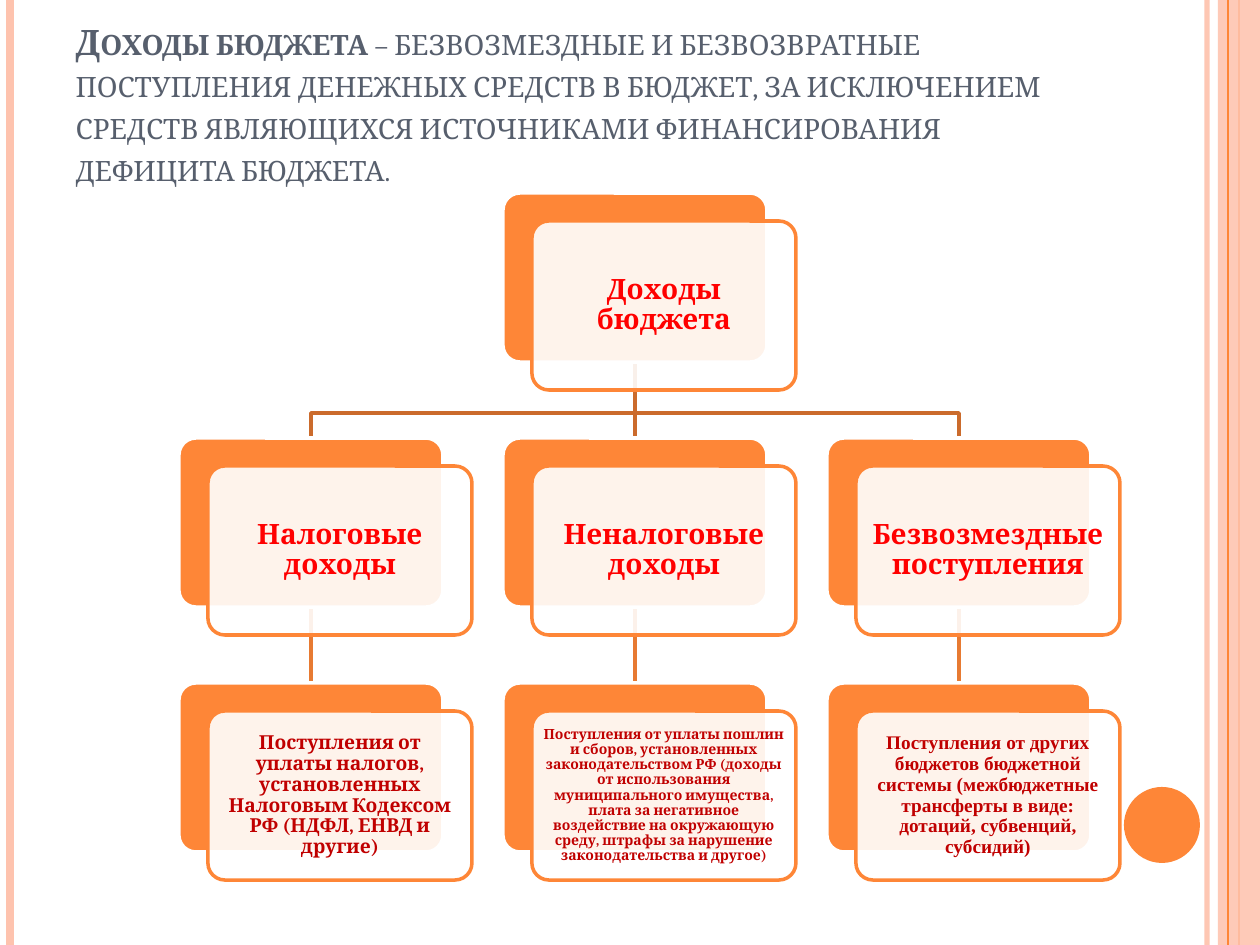
from lxml import etree
from pptx import Presentation
from pptx.dml.color import RGBColor
from pptx.enum.shapes import MSO_CONNECTOR, MSO_SHAPE
from pptx.enum.text import MSO_ANCHOR, MSO_AUTO_SIZE, PP_ALIGN
from pptx.oxml.ns import qn
from pptx.util import Emu, Pt

STRAIGHT = MSO_CONNECTOR.STRAIGHT
RECTANGLE, ROUNDED, OVAL = MSO_SHAPE.RECTANGLE, MSO_SHAPE.ROUNDED_RECTANGLE, MSO_SHAPE.OVAL
MIDDLE, BOTTOM = MSO_ANCHOR.MIDDLE, MSO_ANCHOR.BOTTOM
LEFT, CENTER = PP_ALIGN.LEFT, PP_ALIGN.CENTER
NO_AUTOFIT = MSO_AUTO_SIZE.NONE

EMU_PER_PX = 914400 / 126
SLIDE_WIDTH, SLIDE_HEIGHT = 1260, 945
ORANGE, PEACH, WHITE = "FE8637", "FEC3AE", "FFFFFF"
RED, DARK_RED, SLATE = "FF0000", "C00000", "575F6D"
UPPER_LINE, LOWER_LINE = "CB6B2C", "E77A32"

# Chart grid: back boxes on a regular pitch, front boxes shifted
GRID_LEFT, GRID_TOP, COLUMN_PITCH, ROW_PITCH = 179, 193, 324, 245
BOX_WIDTH, BOX_HEIGHT, SHIFT_X, SHIFT_Y = 264, 169, 29, 28
BRANCH_Y = 413

# (column, row): text, size, colour, inset, font
BOXES = {
    (1, 0): ("Доходы бюджета", 16, RED, 9, "Cambria"),
    (0, 1): ("Налоговые доходы", 16, RED, 9, "Cambria"),
    (1, 1): ("Неналоговые доходы", 16, RED, 9, "Cambria"),
    (2, 1): ("Безвозмездные поступления", 16, RED, 9, "Cambria"),
    (0, 2): ("Поступления от уплаты налогов, установленных Налоговым Кодексом РФ "
             "(НДФЛ, ЕНВД и другие)", 11, DARK_RED, 6, "Cambria"),
    (1, 2): ("Поступления от уплаты пошлин и сборов, установленных законодательством РФ "
             "(доходы от использования муниципального имущества, плата за негативное "
             "воздействие на окружающую среду, штрафы за нарушение законодательства "
             "и другое)", 8, DARK_RED, 4, "Cambria"),
    (2, 2): ("Поступления от других бюджетов бюджетной системы (межбюджетные трансферты "
             "в виде: дотаций, субвенций, субсидий)", 11, DARK_RED, 6, "Times New Roman"),
}
TITLE_RUNS = [
    ("Доходы бюджета ", True),
    ("– безвозмездные и безвозвратные поступления денежных средств в бюджет, "
     "за исключением средств являющихся источниками финансирования дефицита бюджета.", False),
]


def px(value):
    return Emu(round(value * EMU_PER_PX))


def rgb(color):
    return RGBColor.from_string(color)


def set_alpha(fill_format, percent):
    color = fill_format._xPr.find(qn("a:solidFill"))[0]
    etree.SubElement(color, qn("a:alpha"), val=str(percent * 1000))


def style_line(line, color, width):
    line.color.rgb = rgb(color)
    line.width = Pt(width)


def add_shape(slide, kind, left, top, width, height, fill, alpha=100, line=None):
    shape = slide.shapes.add_shape(kind, px(left), px(top), px(width), px(height))
    shape.shadow.inherit = False
    shape.fill.solid()
    shape.fill.fore_color.rgb = rgb(fill)
    if alpha < 100:
        set_alpha(shape.fill, alpha)
    if line:
        style_line(shape.line, line, 2)
    else:
        shape.line.fill.background()
    return shape


def add_line(slide, x1, y1, x2, y2, color, width):
    connector = slide.shapes.add_connector(STRAIGHT, px(x1), px(y1), px(x2), px(y2))
    style_line(connector.line, color, width)
    etree.SubElement(connector._element.spPr, qn("a:effectLst"))
    return connector


def send_to_back(slide, shape):
    slide.shapes._spTree.insert(2, shape._element)


def add_decoration(slide):
    for x, color, width in [(1207, PEACH, 3), (10, PEACH, 4.5), (1239, ORANGE, 1.5)]:
        line = add_line(slide, x, 0, x, SLIDE_HEIGHT, color, width)
        if width == 3:
            set_alpha(line.line.fill, 93)
    add_shape(slide, RECTANGLE, 1218, 0, 42, SLIDE_HEIGHT, PEACH, alpha=87)
    add_line(slide, 1228, 0, 1228, SLIDE_HEIGHT, ORANGE, 0.75)
    add_shape(slide, OVAL, 1124, 787, 76, 76, ORANGE)


def fill_title(slide):
    title = slide.shapes.title
    title.left, title.top, title.width, title.height = px(63), px(38), px(1029), px(157)
    frame = title.text_frame
    frame.vertical_anchor = BOTTOM
    frame.auto_size = NO_AUTOFIT
    frame.word_wrap = True
    paragraph = frame.paragraphs[0]
    paragraph.alignment = LEFT
    for text, bold in TITLE_RUNS:
        run = paragraph.add_run()
        run.text = text
        run.font.name = "Cambria"
        run.font.size = Pt(20)
        run.font.bold = bold
        run.font.color.rgb = rgb(SLATE)
        run._r.get_or_add_rPr().set("cap", "small")


def box_origin(column, row):
    return GRID_LEFT + column * COLUMN_PITCH, GRID_TOP + row * ROW_PITCH


def add_back_box(slide, column, row):
    left, top = box_origin(column, row)
    box = add_shape(slide, ROUNDED, left, top, BOX_WIDTH, BOX_HEIGHT, ORANGE, line=WHITE)
    box.adjustments[0] = 0.1
    return box


def add_front_box(slide, column, row, text, size, color, inset, font):
    left, top = box_origin(column, row)
    box = add_shape(slide, ROUNDED, left + SHIFT_X, top + SHIFT_Y, BOX_WIDTH, BOX_HEIGHT,
                    WHITE, alpha=90, line=ORANGE)
    box.adjustments[0] = 0.1
    frame = box.text_frame
    frame.word_wrap = True
    frame.vertical_anchor = MIDDLE
    frame.margin_left = frame.margin_right = px(inset)
    frame.margin_top = frame.margin_bottom = px(inset)
    paragraph = frame.paragraphs[0]
    paragraph.text = text
    paragraph.alignment = CENTER
    paragraph.line_spacing = 0.9
    paragraph.font.name = font
    paragraph.font.size = Pt(size)
    paragraph.font.bold = True
    paragraph.font.color.rgb = rgb(color)


def join_boxes(slide, upper, lower, color):
    connector = add_line(slide, 0, 0, 0, 0, color, 2)
    connector.begin_connect(upper, 2)
    connector.end_connect(lower, 0)
    send_to_back(slide, connector)


def add_branch(slide, column):
    """Stepped line from the root box to a side column."""
    root_left, root_top = box_origin(1, 0)
    child_left, child_top = box_origin(column, 1)
    start_x, end_x = root_left + BOX_WIDTH / 2, child_left + BOX_WIDTH / 2
    builder = slide.shapes.build_freeform(px(start_x), px(root_top + BOX_HEIGHT))
    corners = [(start_x, BRANCH_Y), (end_x, BRANCH_Y), (end_x, child_top)]
    builder.add_line_segments([(px(x), px(y)) for x, y in corners], close=False)
    branch = builder.convert_to_shape()
    branch.shadow.inherit = False
    branch.fill.background()
    style_line(branch.line, UPPER_LINE, 2)
    send_to_back(slide, branch)


def add_hierarchy(slide):
    backs = {cell: add_back_box(slide, *cell) for cell in BOXES}
    # Links lie behind the boxes
    for column in range(3):
        join_boxes(slide, backs[column, 1], backs[column, 2], LOWER_LINE)
    join_boxes(slide, backs[1, 0], backs[1, 1], UPPER_LINE)
    for column in (0, 2):
        add_branch(slide, column)
    for cell, content in BOXES.items():
        add_front_box(slide, *cell, *content)


def main():
    presentation = Presentation()
    presentation.slide_width, presentation.slide_height = px(SLIDE_WIDTH), px(SLIDE_HEIGHT)
    slide = presentation.slides.add_slide(presentation.slide_layouts[5])
    add_decoration(slide)
    fill_title(slide)
    add_hierarchy(slide)
    presentation.save("out.pptx")


if __name__ == "__main__":
    main()
